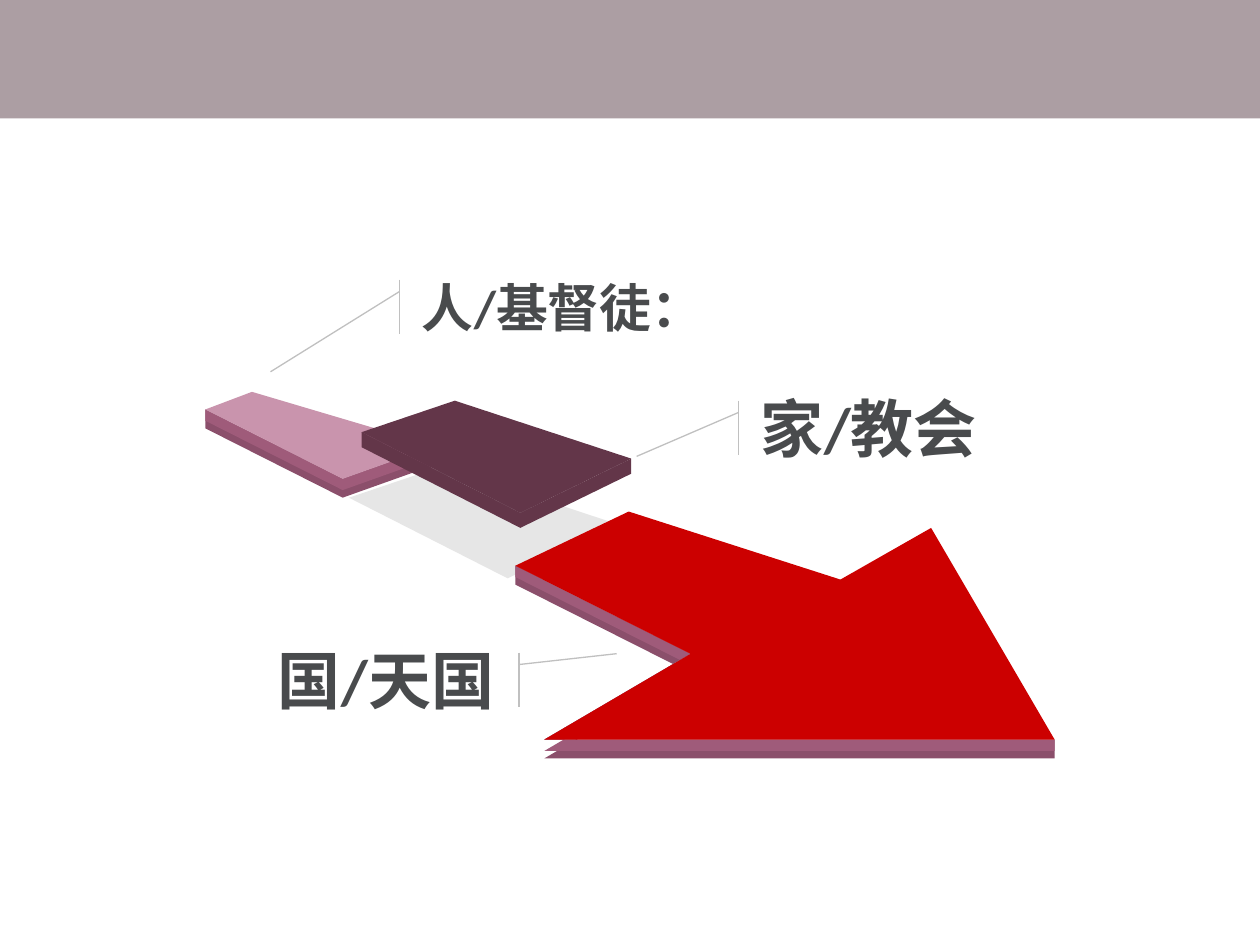
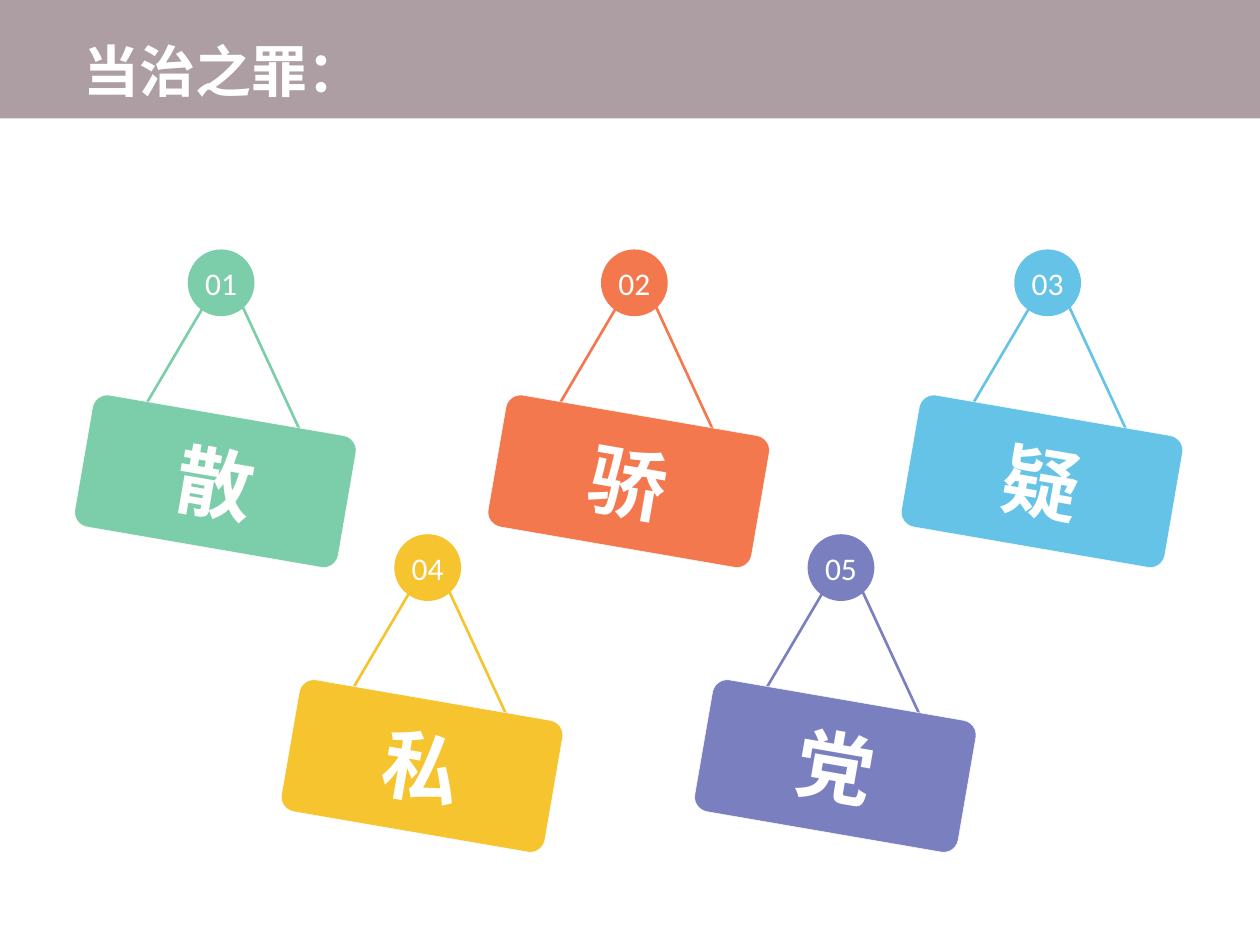
from lxml.etree import SubElement
from pptx import Presentation
from pptx.dml.color import RGBColor
from pptx.enum.shapes import MSO_SHAPE
from pptx.enum.text import MSO_ANCHOR, PP_ALIGN
from pptx.oxml.ns import qn
from pptx.util import Inches, Pt

LATIN = "Calibri"
CHINESE = "Noto Sans CJK SC"
WHITE, BAND, TEXT, LEADER = "FFFFFF", "AC9EA3", "494B4D", "C0C0C0"
SIDE, EDGE, PLUM = "9F5B7A", "8B4F6B", "633649"

FLOOR_SHADOW = [(4.03, 4.59), (4.9, 4.16), (3.51, 3.7), (2.77, 3.95)]
SLABS = [
    {
        "top": "C994AD",
        "front": [(1.63, 3.25), (2.72, 3.8), (3.45, 3.54)],
        "back": [(2, 3.11)],
        "layers": [(0.15, EDGE), (0.09, SIDE)],
    },
    {
        "top": PLUM,
        "front": [(2.87, 3.43), (4.13, 4.07), (5.01, 3.64)],
        "back": [(3.61, 3.18)],
        "layers": [(0.12, PLUM)],
    },
    {
        "top": "CC0000",
        "front": [(4.09, 4.49), (5.48, 5.19), (4.32, 5.87), (8.37, 5.87)],
        "back": [(7.39, 4.19), (6.67, 4.6), (4.99, 4.06)],
        "layers": [(0.15, EDGE), (0.09, SIDE)],
    },
]
CALLOUTS = [
    ("国/天国", 36, (1.52, 5.18, 2.5, 0.43), (0.22, 1.04, 0.02, 1.35), PP_ALIGN.RIGHT),
    ("家/教会", 36, (5.94, 3.18, 2.69, 0.43), (0.22, -0.03, 1.03, -0.33), PP_ALIGN.LEFT),
    ("人/基督徒：", 29.6, (3.25, 2.22, 2.69, 0.43), (0.22, -0.03, 1.7, -0.41), PP_ALIGN.LEFT),
]

SINS_TITLE = "当治之罪："
SIN_ROWS = [
    (0.65, 3.29, [("散", "7CCDA9"), ("骄", "F3784E"), ("疑", "65C3E7")]),
    (2.29, 5.55, [("私", "F5C42E"), ("党", "7A7FC0")]),
]
SIGN_STEP = 3.28
SIGN_SIZE = (2.12, 1.06)
STRING = [(0.49, -0.05), (1.08, -1.05), (1.2, -1.02), (1.83, 0.34)]
PIN_OFFSET = (0.84, -1.31)
PIN_SIZE = 0.53


def rgb(value):
    return RGBColor.from_string(value)


def paint(shape, fill=None, line=None, width=0.75):
    shape.shadow.inherit = False
    if fill:
        shape.fill.solid()
        shape.fill.fore_color.rgb = rgb(fill)
    else:
        shape.fill.background()
    if line:
        shape.line.color.rgb = rgb(line)
        shape.line.width = Pt(width)
    else:
        shape.line.fill.background()


def add_box(page, kind, place, **style):
    shape = page.shapes.add_shape(kind, *map(Inches, place))
    paint(shape, **style)
    return shape


def add_outline(page, points, close=True, **style):
    corners = [(Inches(x), Inches(y)) for x, y in points]
    builder = page.shapes.build_freeform(*corners[0], scale=1.0)
    builder.add_line_segments(corners[1:], close=close)
    shape = builder.convert_to_shape()
    paint(shape, **style)
    return shape


def write(shape, text, size, color, font, bold, align=PP_ALIGN.CENTER, side_inset=0):
    frame = shape.text_frame
    frame.word_wrap = True
    frame.vertical_anchor = MSO_ANCHOR.MIDDLE
    frame.margin_left = frame.margin_right = Inches(side_inset)
    frame.margin_top = frame.margin_bottom = 0
    frame.text = text
    para = frame.paragraphs[0]
    para.alignment = align
    para.font.size = Pt(size)
    para.font.bold = bold
    para.font.color.rgb = rgb(color)
    para.font.name = font
    defaults = para._p.pPr.find(qn("a:defRPr"))
    SubElement(defaults, qn("a:ea")).set("typeface", CHINESE)
    return para


def add_master_band(deck, page):
    band = add_box(page, MSO_SHAPE.RECTANGLE, (0, 0, 10, 0.94), fill=BAND)
    deck.slide_master.shapes._spTree.insert(2, band._element)


def add_slab(page, slab):
    front = slab["front"]
    for drop, color in slab["layers"]:
        lower = [(x, y + drop) for x, y in reversed(front)]
        add_outline(page, front + lower, fill=color)
    add_outline(page, front + slab["back"], fill=slab["top"])


def build_arrow(page):
    add_outline(page, FLOOR_SHADOW, fill="E6E6E6")
    for slab in SLABS:
        add_slab(page, slab)
    for text, size, place, leader, align in CALLOUTS:
        callout = add_box(page, MSO_SHAPE.LINE_CALLOUT_1_ACCENT_BAR, place, line=LEADER)
        for index, value in enumerate(leader):
            callout.adjustments[index] = value
        write(callout, text, size, TEXT, LATIN, True, align, 0.1)


def add_sign(page, left, top, number, word, color):
    string = [(left + x, top + y) for x, y in STRING]
    add_outline(page, string, close=False, line=color, width=1.5)
    board = add_box(page, MSO_SHAPE.ROUNDED_RECTANGLE, (left, top, *SIGN_SIZE),
                    fill=color, line=WHITE, width=0.25)
    board.adjustments[0] = 0.11
    board.rotation = 9.8
    write(board, word, 44, WHITE, CHINESE, True)
    pin_place = (left + PIN_OFFSET[0], top + PIN_OFFSET[1], PIN_SIZE, PIN_SIZE)
    pin = add_box(page, MSO_SHAPE.OVAL, pin_place, fill=color)
    write(pin, f"{number:02d}", 18, WHITE, LATIN, False)


def build_sins(page):
    title = page.shapes.title
    title.left, title.top, title.width, title.height = map(Inches, (0.56, 0.07, 8.9, 0.87))
    para = write(title, SINS_TITLE, 32, WHITE, CHINESE, True, PP_ALIGN.LEFT, 0.1)
    para.line_spacing = 1.2
    number = 0
    for left, top, signs in SIN_ROWS:
        for column, (word, color) in enumerate(signs):
            number += 1
            add_sign(page, left + column * SIGN_STEP, top, number, word, color)


def main():
    deck = Presentation()
    deck.slide_width, deck.slide_height = Inches(10), Inches(7.5)
    title_only, blank = deck.slide_layouts[5], deck.slide_layouts[6]
    arrow_page = deck.slides.add_slide(blank)
    add_master_band(deck, arrow_page)
    build_arrow(arrow_page)
    build_sins(deck.slides.add_slide(title_only))
    deck.save("out.pptx")


if __name__ == "__main__":
    main()
